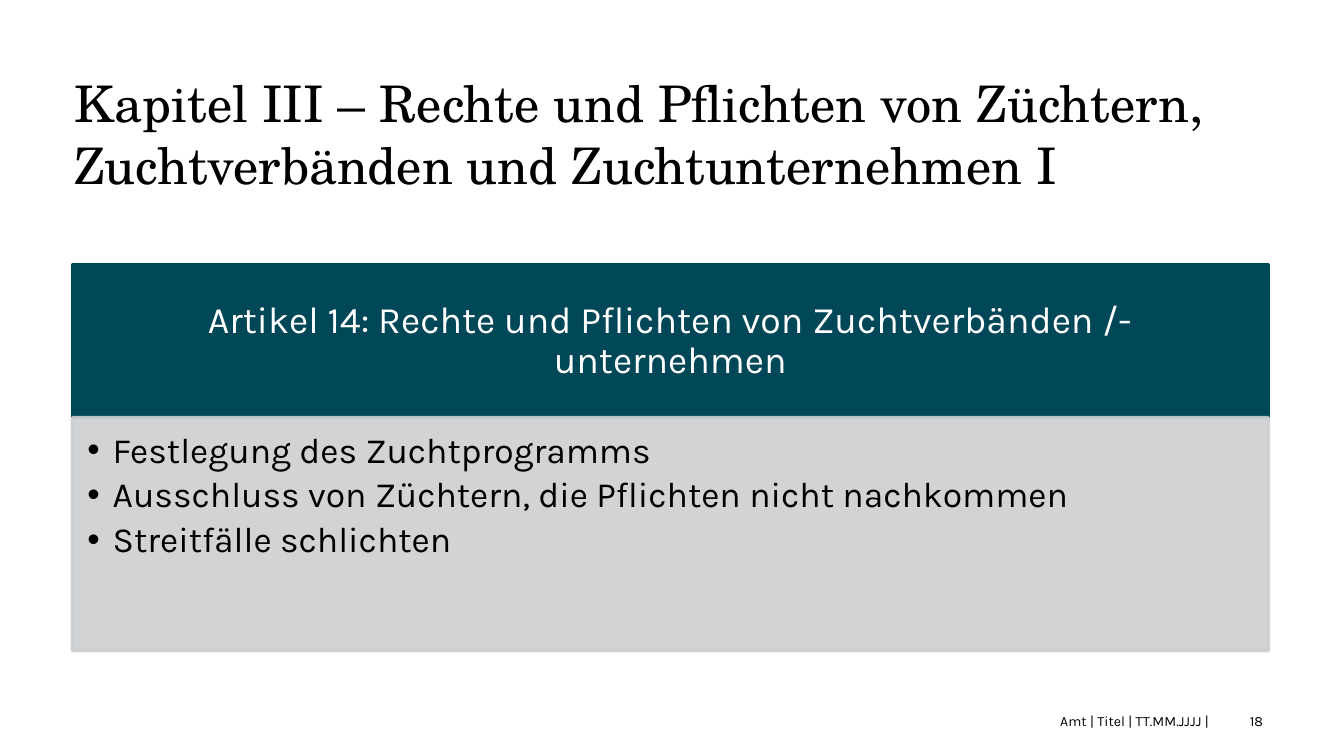
import dataclasses

import pptx
import pptx.dml.color
import pptx.enum.shapes
import pptx.enum.text
import pptx.oxml.ns
import pptx.oxml.xmlchemy
import pptx.util
from lxml import etree

Cm = pptx.util.Cm
Pt = pptx.util.Pt
Align = pptx.enum.text.PP_ALIGN
Anchor = pptx.enum.text.MSO_ANCHOR


@dataclasses.dataclass(frozen=True)
class Theme:
    heading_font: str = "TeX Gyre Schola"
    body_font: str = "Karla"
    ink: str = "000000"
    paper: str = "FFFFFF"
    petrol: str = "004757"
    grey: str = "CCCFD1"
    title_size: float = 27
    article_size: float = 20
    list_size: float = 19
    footer_size: float = 7.5


class SlideBuilder:
    """Hold the theme and the current slide, and add each kind of element."""

    def __init__(self, presentation, theme):
        self.theme = theme
        self.slide = presentation.slides.add_slide(presentation.slide_layouts[1])

    def place(self, shape, left, top, width, height):
        shape.left, shape.top = Cm(left), Cm(top)
        shape.width, shape.height = Cm(width), Cm(height)

    def set_frame(self, shape, anchor, left=0, top=0, right=0, bottom=0):
        frame = shape.text_frame
        frame.word_wrap = True
        frame.auto_size = pptx.enum.text.MSO_AUTO_SIZE.NONE
        frame.vertical_anchor = anchor
        frame.margin_left, frame.margin_top = Cm(left), Cm(top)
        frame.margin_right, frame.margin_bottom = Cm(right), Cm(bottom)
        return frame

    def style(self, paragraph, size, color, align=Align.LEFT, spacing=1.0, font=None):
        paragraph.alignment = align
        paragraph.line_spacing = spacing
        paragraph.space_before = Pt(0)
        paragraph.font.name = font or self.theme.body_font
        paragraph.font.size = Pt(size)
        paragraph.font.color.rgb = pptx.dml.color.RGBColor.from_string(color)

    def paint(self, shape, color, opacity=100):
        rgb = pptx.dml.color.RGBColor.from_string(color)
        shape.fill.solid()
        shape.fill.fore_color.rgb = rgb
        shape.line.color.rgb = rgb
        shape.line.width = Pt(2)
        qn = pptx.oxml.ns.qn
        if opacity < 100:
            for node in shape.fill._xPr.iter(qn("a:srgbClr")):
                etree.SubElement(node, qn("a:alpha")).set("val", str(opacity * 1000))
        etree.SubElement(shape.line._get_or_add_ln(), qn("a:round"))

    def title(self, text, *box):
        shape = self.slide.shapes.title
        self.place(shape, *box)
        frame = self.set_frame(shape, Anchor.TOP)
        frame.text = text
        self.style(frame.paragraphs[0], self.theme.title_size, self.theme.ink,
                   spacing=Pt(33), font=self.theme.heading_font)

    def article(self, text, *box):
        shape = self.slide.shapes.add_shape(
            pptx.enum.shapes.MSO_SHAPE.RECTANGLE, *map(Cm, box))
        shape.shadow.inherit = False
        self.paint(shape, self.theme.petrol)
        frame = self.set_frame(shape, Anchor.MIDDLE, 0.4, 0.23, 0.4, 0.23)
        frame.text = text
        self.style(frame.paragraphs[0], self.theme.article_size, self.theme.paper,
                   Align.CENTER, 0.9)

    def bullets(self, items, *box):
        shape = self.slide.placeholders[1]
        self.place(shape, *box)
        self.paint(shape, self.theme.grey, 90)
        self.slide.shapes._spTree.append(shape._element)
        frame = self.set_frame(shape, Anchor.TOP, 0.28, 0.28, 0.38, 0.43)
        frame.text = "\n".join(items)
        indent = Cm(0.48)
        for paragraph in frame.paragraphs:
            self.style(paragraph, self.theme.list_size, self.theme.ink, spacing=0.9)
            paragraph.space_after = Pt(3.4)
            properties = paragraph._p.get_or_add_pPr()
            properties.set("marL", str(indent))
            properties.set("indent", str(-indent))

    def footer(self, text, align, *box):
        shape = self.slide.shapes.add_textbox(*map(Cm, box))
        frame = self.set_frame(shape, Anchor.MIDDLE, left=0.25, right=0.25)
        frame.text = text
        self.style(frame.paragraphs[0], self.theme.footer_size, self.theme.ink, align)


def main():
    presentation = pptx.Presentation()
    presentation.slide_width, presentation.slide_height = Cm(25.4), Cm(14.28)
    builder = SlideBuilder(presentation, Theme())

    left, width = 1.37, 22.6
    article_top, article_height = 5.01, 2.88
    builder.title("Kapitel III – Rechte und Pflichten von Züchtern, "
                  "Zuchtverbänden und Zuchtunternehmen I", 1.4, 1.35, width, 2.2)
    builder.article("Artikel 14: Rechte und Pflichten von Zuchtverbänden /-unternehmen",
                    left, article_top, width, article_height)
    builder.bullets(["Festlegung des Zuchtprogramms",
                     "Ausschluss von Züchtern, die Pflichten nicht nachkommen",
                     "Streitfälle schlichten"],
                    left, article_top + article_height, width, 4.4)

    footer_top, footer_height = 13.46, 0.33
    builder.footer("Amt | Titel | TT.MM.JJJJ |", Align.RIGHT,
                   7.7, footer_top, 15.4, footer_height)
    builder.footer("18", Align.LEFT, 23.37, footer_top, 1.2, footer_height)
    presentation.save("out.pptx")


if __name__ == "__main__":
    main()
